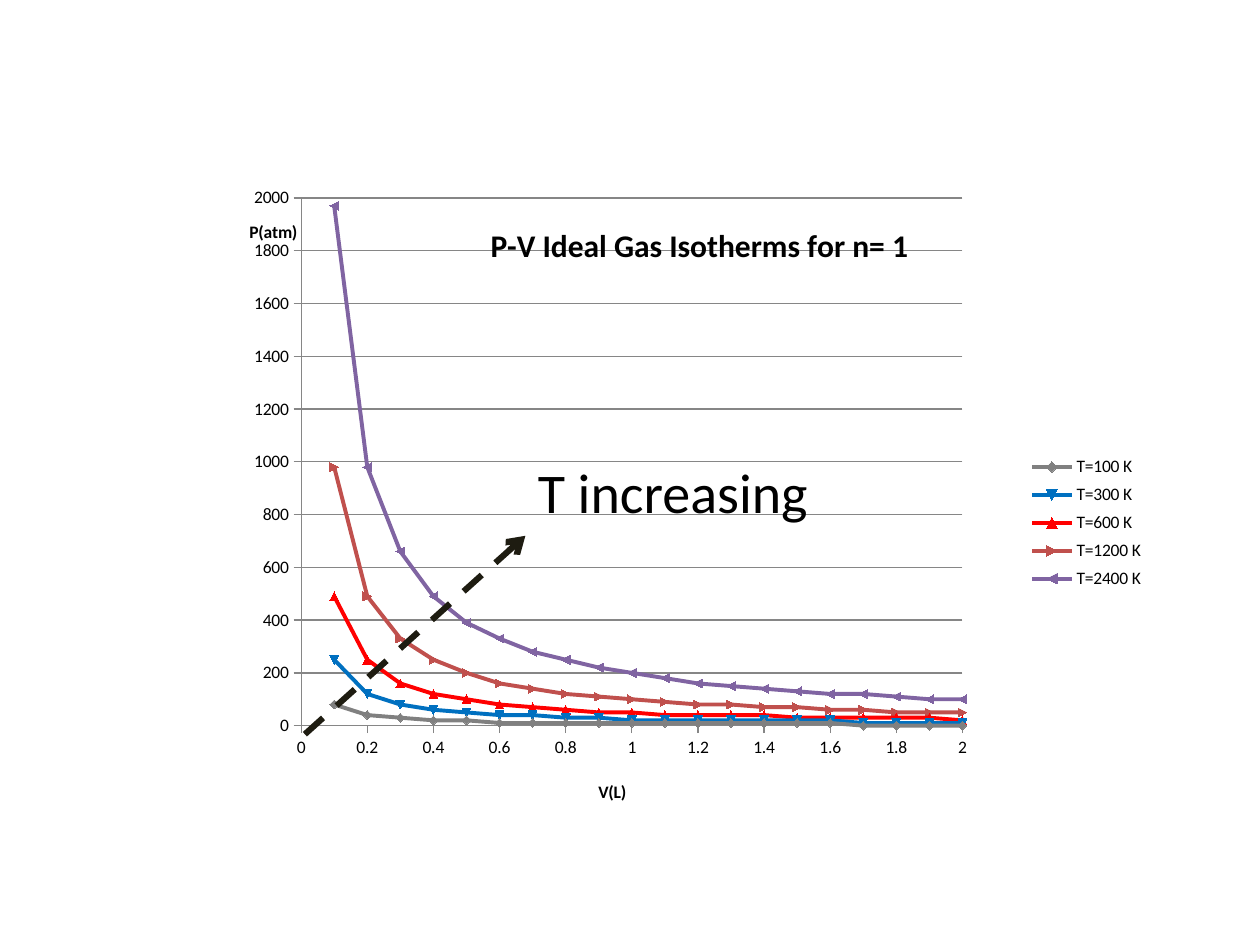
import pptx
import pptx.chart.data
import pptx.dml.color
import pptx.enum.chart
import pptx.enum.dml
import pptx.enum.shapes
import pptx.enum.text
import pptx.oxml
import pptx.oxml.ns
import pptx.util

WIDE, HIGH = 10, 7.5
FONT = "Calibri"
HUES = {"text": "000000", "grid": "868686", "arrow": "1E1C11",
        "100": "808080", "300": "0070C0", "600": "FF0000",
        "1200": "C0504D", "2400": "8064A2"}
TEMPS = (100, 300, 600, 1200, 2400)
GAS = 0.08206  # L atm / (mol K)


def hue(key):
    return pptx.dml.color.RGBColor.from_string(HUES[key])


def style(font, size, bold=False):
    font.name, font.size, font.bold = FONT, pptx.util.Pt(size), bold
    font.color.rgb = hue("text")


def place(node, after, inner=False, **share):
    """Lay out a chart part by shares of the chart's size."""
    for old in node.findall(pptx.oxml.ns.qn("c:layout")):
        node.remove(old)
    tags = '<c:layoutTarget val="inner"/>' if inner else ""
    tags += "".join(f'<c:{k}Mode val="edge"/>' for k in ("x", "y"))
    tags += "".join(f'<c:{k} val="{v}"/>' for k, v in share.items())
    new = pptx.oxml.parse_xml(
        f'<c:layout {pptx.oxml.ns.nsdecls("c")}><c:manualLayout>{tags}'
        "</c:manualLayout></c:layout>")
    if after:
        node.find(pptx.oxml.ns.qn(after)).addnext(new)
    else:
        node.insert(0, new)


def label(title, text, size, x, y):
    frame = title.text_frame
    frame.text = text
    style(frame.paragraphs[0].runs[0].font, size, True)
    frame._txBody.bodyPr.set("rot", "0")
    place(title._element, "c:tx", x=x, y=y)


def scale(axis, top, step, text, x, y):
    axis.minimum_scale, axis.maximum_scale, axis.major_unit = 0, top, step
    axis.major_tick_mark = pptx.enum.chart.XL_TICK_MARK.OUTSIDE
    axis.minor_tick_mark = pptx.enum.chart.XL_TICK_MARK.NONE
    axis.tick_labels.number_format = "General"
    axis.tick_labels.number_format_is_linked = False
    axis.format.line.color.rgb = hue("grid")
    axis.format.line.width = pptx.util.Pt(0.75)
    label(axis.axis_title, text, 10, x, y)


def graph(slide, box):
    # Pressure of one mole at each volume, to the nearest ten
    data = pptx.chart.data.XyChartData()
    for temp in TEMPS:
        row = data.add_series(f"T={temp} K")
        for step in range(1, 21):
            vol = step / 10
            row.add_data_point(vol, round(GAS * temp / vol, -1))
    kind = pptx.enum.chart.XL_CHART_TYPE.XY_SCATTER_LINES
    chart = slide.shapes.add_chart(
        kind, *map(pptx.util.Inches, box), data).chart
    style(chart.font, 10)

    # Curves
    plot = chart.plots[0]
    plot.vary_by_categories = False
    for temp, row in zip(TEMPS, plot.series):
        row.smooth = False
        row.format.line.color.rgb = hue(str(temp))
        row.format.line.width = pptx.util.Pt(2.25)
        fill = row.marker.format.fill
        fill.solid()
        fill.fore_color.rgb = hue(str(temp))
        row.marker.format.line.color.rgb = hue(str(temp))
        row.marker.size = 5

    # Axes and grid
    scale(chart.category_axis, 2, 0.2, "V(L)", 0.39, 0.92)
    scale(chart.value_axis, 2000, 200, "P(atm)", 0.01, 0.05)
    chart.category_axis.has_major_gridlines = False
    chart.value_axis.has_major_gridlines = True
    grid = chart.value_axis.major_gridlines.format.line
    grid.color.rgb, grid.width = hue("grid"), pptx.util.Pt(0.75)

    # Title, legend and plot area
    chart.has_title = True
    label(chart.chart_title, "P-V Ideal Gas Isotherms for n= 1", 18, 0.27, 0.05)
    chart.has_legend = True
    key = chart.legend
    key.position = pptx.enum.chart.XL_LEGEND_POSITION.RIGHT
    key.include_in_layout = False
    place(key._element, "c:legendPos", x=0.86, y=0.41, w=0.13, h=0.23)
    area = chart._chartSpace.chart.plotArea
    place(area, None, True, x=0.07, y=0.02, w=0.72, h=0.82)


def trend(slide, box):
    """Dashed arrow up the box, with its caption at the tip."""
    left, top, wide, high = box
    ends = (left, top + high, left + wide, top)
    arrow = slide.shapes.add_connector(
        pptx.enum.shapes.MSO_CONNECTOR.STRAIGHT, *map(pptx.util.Inches, ends))
    arrow.line.color.rgb = hue("arrow")
    arrow.line.width = pptx.util.Pt(3.5)
    arrow.line.dash_style = pptx.enum.dml.MSO_LINE.DASH
    space = pptx.oxml.ns.nsdecls("a")
    arrow.line._get_or_add_ln().append(
        pptx.oxml.parse_xml(f'<a:tailEnd {space} type="arrow"/>'))
    arrow._element.spPr.append(pptx.oxml.parse_xml(f"<a:effectLst {space}/>"))

    # Caption
    spot = (left + wide, top - 0.67, 2.5, 0.64)
    note = slide.shapes.add_textbox(*map(pptx.util.Inches, spot)).text_frame
    note.word_wrap = True
    note.auto_size = pptx.enum.text.MSO_AUTO_SIZE.SHAPE_TO_FIT_TEXT
    note.text = "T increasing"
    style(note.paragraphs[0].runs[0].font, 32)


def main():
    deck = pptx.Presentation()
    deck.slide_width = pptx.util.Inches(WIDE)
    deck.slide_height = pptx.util.Inches(HIGH)
    slide = deck.slides.add_slide(deck.slide_layouts[6])
    graph(slide, (0.188 * WIDE, 0.196 * HIGH, 0.729 * WIDE, 0.681 * HIGH))
    trend(slide, (0.242 * WIDE, 0.567 * HIGH, 0.175 * WIDE, 0.21 * HIGH))
    deck.save("out.pptx")


if __name__ == "__main__":
    main()
